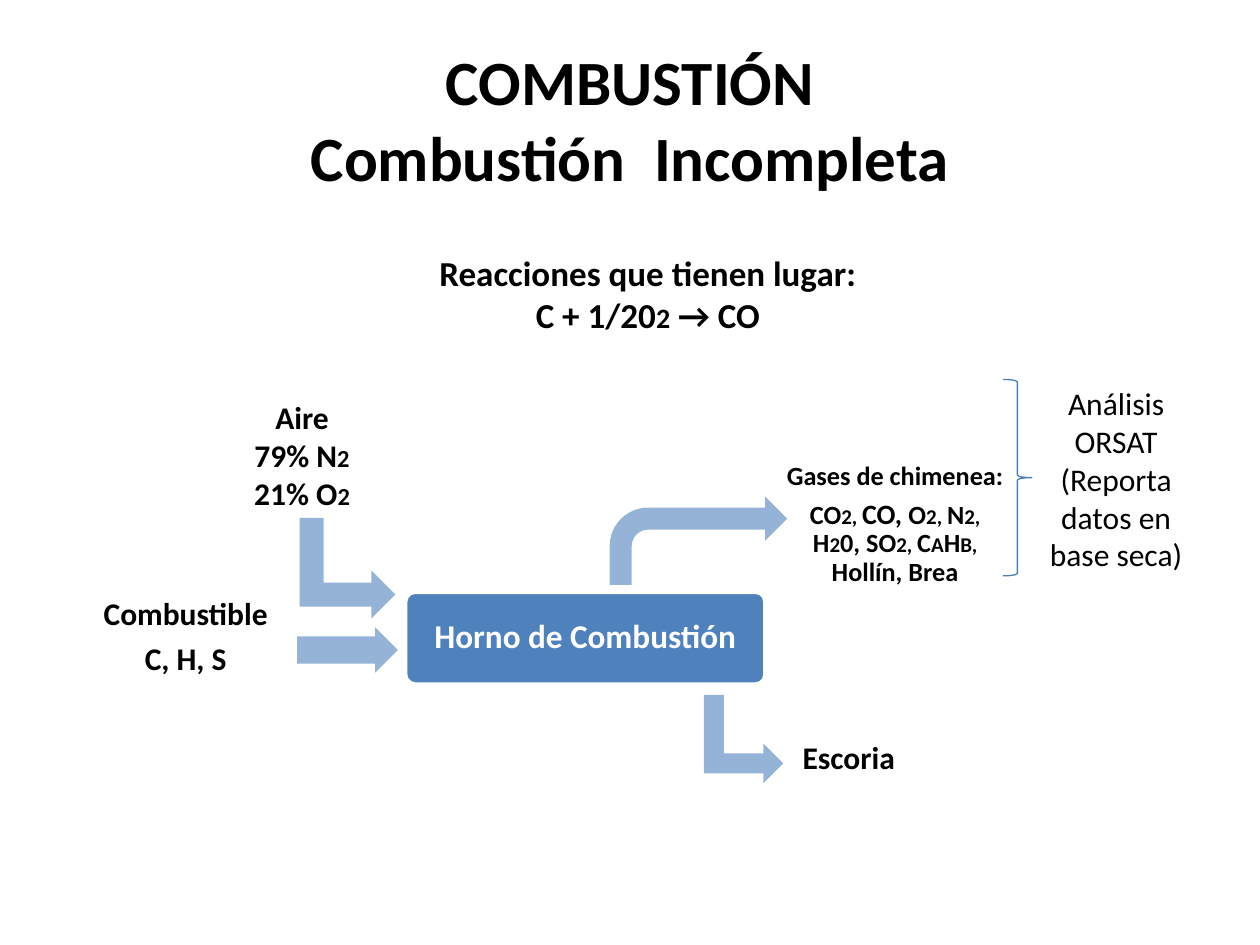
"""Build a slide that shows the flows of an incomplete combustion furnace."""
from dataclasses import dataclass
from typing import Optional

from pptx import Presentation
from pptx.dml.color import RGBColor
from pptx.enum import shapes, text
from pptx import util as u

Kind = shapes.MSO_SHAPE
Anchor = text.MSO_ANCHOR
Run = tuple[str, float]


@dataclass(frozen=True)
class Theme:
    font: str = "Calibri"
    ink: str = "000000"
    paper: str = "FFFFFF"
    furnace: str = "4F81BD"
    flow: str = "95B3D7"
    brace: str = "4B7EBC"
    title: float = 36
    heading: float = 20
    heading_sub: float = 16
    furnace_label: float = 19
    label: float = 18
    label_sub: float = 14
    gas: float = 15
    gas_sub: float = 12
    gas_key: float = 16


@dataclass(frozen=True)
class Frame:
    left: float
    top: float
    width: float
    height: float

    def lengths(self) -> list[u.Length]:
        return [u.Cm(n) for n in (self.left, self.top, self.width, self.height)]


@dataclass(frozen=True)
class Label:
    frame: Frame
    lines: list[list[Run]]
    bold: bool = True
    anchor: Anchor = Anchor.TOP
    inset: Optional[float] = None
    tight: bool = False


@dataclass(frozen=True)
class Flow:
    kind: Kind
    frame: Frame
    adjustments: tuple[float, ...]
    turn: float = 0


THEME = Theme()


def subscripted(source: str, size: float, sub: float) -> list[Run]:
    """Split text at bars into runs that alternate between full and small size."""
    return [(part, sub if index % 2 else size)
            for index, part in enumerate(source.split("|"))]


def write(box, label: Label, color: str) -> None:
    """Write the label's lines into a shape, run by run."""
    frame = box.text_frame
    frame.word_wrap = True
    frame.vertical_anchor = label.anchor
    if label.inset is not None:
        frame.margin_left = frame.margin_right = u.Cm(label.inset)
        frame.margin_top = frame.margin_bottom = u.Cm(label.inset)
    for index, runs in enumerate(label.lines):
        para = frame.add_paragraph() if index else frame.paragraphs[0]
        para.alignment = text.PP_ALIGN.CENTER
        if label.tight:
            para.line_spacing = 0.9
            para.space_after = u.Pt(round(0.35 * runs[0][1], 1))
        for words, size in runs:
            if words == "\n":
                para.add_line_break()
                continue
            span = para.add_run()
            span.text = words
            span.font.name = THEME.font
            span.font.size = u.Pt(size)
            span.font.bold = label.bold
            span.font.color.rgb = RGBColor.from_string(color)


def add_label(page, label: Label) -> None:
    """Add a text box for a label."""
    write(page.shapes.add_textbox(*label.frame.lengths()), label, THEME.ink)


def add_preset(page, kind: Kind, frame: Frame, fill: Optional[str] = None,
               line: Optional[str] = None, weight: float = 0):
    """Add a preset shape without a shadow."""
    shape = page.shapes.add_shape(kind, *frame.lengths())
    shape.shadow.inherit = False
    if fill:
        shape.fill.solid()
        shape.fill.fore_color.rgb = RGBColor.from_string(fill)
    else:
        shape.fill.background()
    if line:
        shape.line.color.rgb = RGBColor.from_string(line)
        shape.line.width = u.Pt(weight)
    else:
        shape.line.fill.background()
    return shape


def add_flow(page, flow: Flow) -> None:
    """Add a block arrow for a stream that enters or leaves the furnace."""
    arrow = add_preset(page, flow.kind, flow.frame, THEME.flow)
    arrow.rotation = flow.turn
    for index, value in enumerate(flow.adjustments):
        arrow.adjustments[index] = value


def add_furnace(page) -> None:
    """Add the furnace block with its name."""
    frame = Frame(8.18, 11.94, 7.24, 1.85)
    block = add_preset(page, Kind.ROUNDED_RECTANGLE, frame,
                       THEME.furnace, THEME.paper, 2)
    block.adjustments[0] = 0.1
    name = Label(frame, [[("Horno de Combustión", THEME.furnace_label)]],
                 anchor=Anchor.MIDDLE, inset=0.25, tight=True)
    write(block, name, THEME.paper)


QUARTERS = (0.25, 0.25, 0.25)
FLOWS = [
    Flow(Kind.RIGHT_ARROW, Frame(5.99, 12.65, 2.03, 0.91), (0.6, 0.5)),
    Flow(Kind.BENT_ARROW, Frame(12.29, 10.01, 3.58, 1.78), (*QUARTERS, 0.4375)),
    Flow(Kind.BENT_UP_ARROW, Frame(14.1, 14.1, 1.78, 1.6), QUARTERS, 90),
    Flow(Kind.BENT_UP_ARROW, Frame(5.99, 10.49, 2.03, 1.93), QUARTERS, 90),
]

GASES = subscripted("CO|2, |", THEME.gas, THEME.gas_sub)[:2] + [
    ("CO, ", THEME.gas_key)] + subscripted(
    "O|2, |N|2, |H|2|0, SO|2, |C|A|H|B, |Hollín, Brea", THEME.gas, THEME.gas_sub)

LABELS = [
    Label(Frame(1.27, 0.79, 22.86, 3.18),
          [[("COMBUSTIÓN", THEME.title), ("\n", THEME.title),
            ("Combustión  Incompleta", THEME.title)]], anchor=Anchor.MIDDLE),
    Label(Frame(6.71, 4.95, 12.7, 2.82),
          [[("Reacciones que tienen lugar:", THEME.heading)],
           subscripted("C + 1/20|2| → CO", THEME.heading, THEME.heading_sub)]),
    Label(Frame(1.37, 11.4, 4.75, 2.92),
          [[("Combustible", THEME.label)], [("C, H, S", THEME.label)]],
          anchor=Anchor.MIDDLE, inset=0.18, tight=True),
    Label(Frame(15.67, 9.12, 4.75, 2.92),
          [[("Gases de chimenea:", THEME.gas)], GASES],
          anchor=Anchor.MIDDLE, inset=0.15, tight=True),
    Label(Frame(4.5, 7.9, 3.18, 2.57),
          [[("Aire", THEME.label)],
           subscripted("79% N|2", THEME.label, THEME.label_sub),
           subscripted("21% O|2", THEME.label, THEME.label_sub)]),
    Label(Frame(15.52, 14.76, 3.18, 1.02), [[("Escoria", THEME.label)]]),
    Label(Frame(20.62, 7.62, 3.76, 4.11),
          [[("Análisis ORSAT", THEME.label)],
           [("(Reporta datos en base seca)", THEME.label)]], bold=False),
]


def main() -> None:
    """Draw the slide and save the deck."""
    deck = Presentation()
    deck.slide_width, deck.slide_height = u.Cm(25.4), u.Cm(19.05)
    page = deck.slides.add_slide(deck.slide_layouts[6])
    add_furnace(page)
    for flow in FLOWS:
        add_flow(page, flow)
    add_preset(page, Kind.RIGHT_BRACE, Frame(20.22, 7.65, 0.58, 3.96),
               line=THEME.brace, weight=0.75)
    for label in LABELS:
        add_label(page, label)
    deck.save("out.pptx")


if __name__ == "__main__":
    main()
